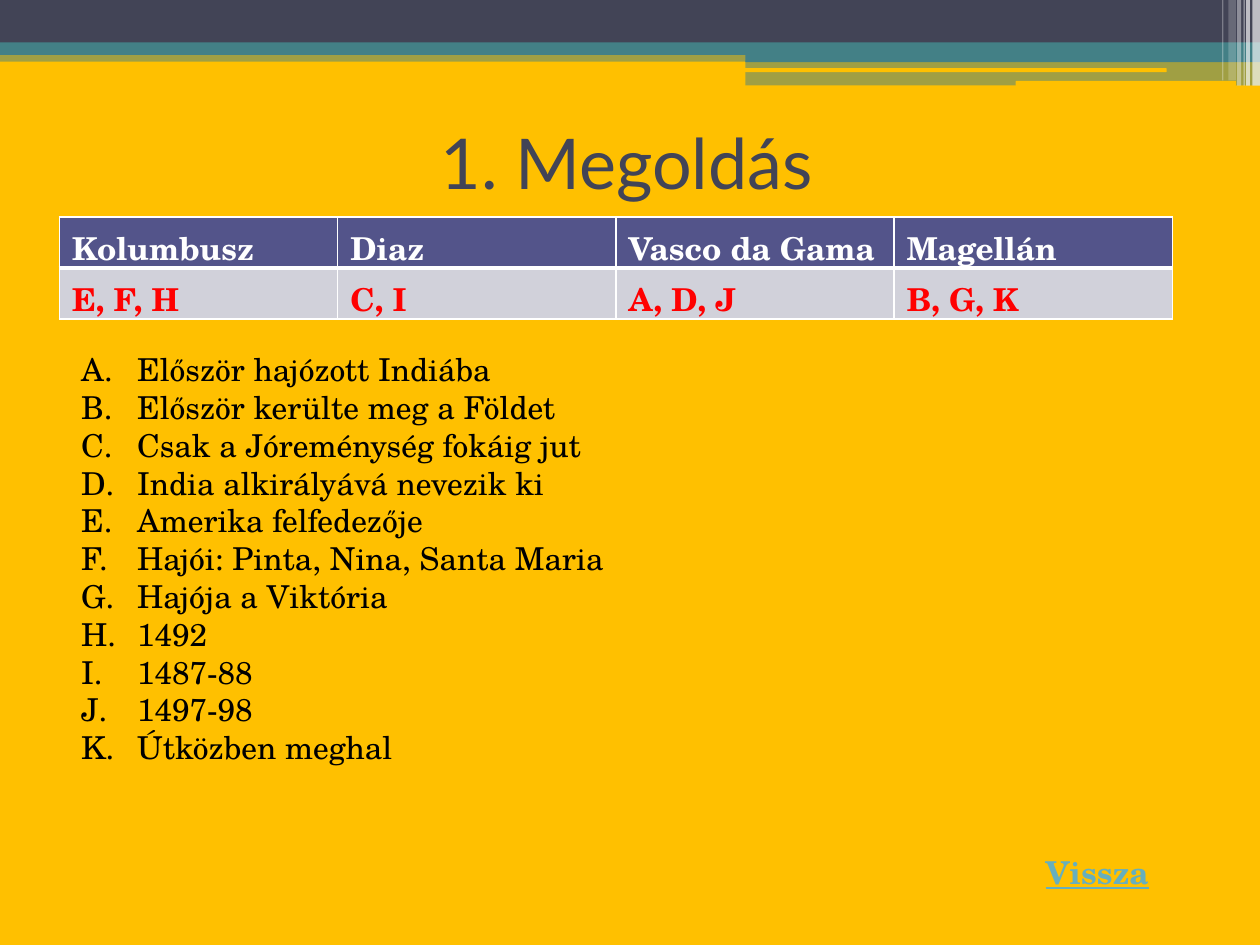
from lxml import etree
from pptx import Presentation
from pptx.dml.color import RGBColor
from pptx.enum.shapes import MSO_SHAPE
from pptx.enum.text import MSO_ANCHOR, PP_ALIGN
from pptx.oxml.ns import qn
from pptx.util import Pt

RECT = MSO_SHAPE.RECTANGLE
ROUND = MSO_SHAPE.ROUNDED_RECTANGLE
MIDDLE = MSO_ANCHOR.MIDDLE
CENTER = PP_ALIGN.CENTER
SERIF = "TeX Gyre Schola"
GOLD, TEAL, SLATE, WHITE = "FFC000", "438086", "424456", "FFFFFF"


def paint(fill, color):
    fill.solid()
    fill.fore_color.rgb = RGBColor.from_string(color)


def write(par, text, color, **form):
    run = par.add_run()
    run.text = text
    for key, value in {"name": SERIF, "size": Pt(18), **form}.items():
        setattr(run.font, key, value)
    paint(run.font.fill, color)


deck = Presentation()
deck.slide_width, deck.slide_height = Pt(720), Pt(540)
slide = deck.slides.add_slide(deck.slide_layouts[5])
paint(slide.background.fill, GOLD)

# Header bars and stripes: form, left, top, width, height, colour, opacity
bars = [
    (RECT, 0, 28.8, 720, 6.5, TEAL, 50),
    (RECT, 0, 0, 720, 24.5, SLATE, 100),
    (RECT, 0, 24.2, 720, 7.2, TEAL, 100),
    (RECT, 426, 28.3, 294, 7.2, TEAL, 100),
    (RECT, 426, 34.6, 294, 14.2, TEAL, 50),
    (ROUND, 425.5, 39, 241.2, 2.2, GOLD, 100),
    (ROUND, 580.3, 46.3, 126, 2.9, GOLD, 100),
]
stripes = [(715.7, 4.3, 49, 65), (712.1, 2.2, 49, 65), (710.6, 0.7, 49, 60),
           (707, 2.2, 49, 40), (702, 4.3, 46, 20), (698.4, 0.7, 46, 30)]
bars += [(RECT, x, 0, w, h, WHITE, a) for x, w, h, a in stripes]
for form, x, y, w, h, color, alpha in bars:
    bar = slide.shapes.add_shape(form, Pt(x), Pt(y), Pt(w), Pt(h))
    bar.shadow.inherit = False
    bar.line.fill.background()
    paint(bar.fill, color)
    if alpha < 100:
        tint = bar.fill._xPr.find(".//" + qn("a:srgbClr"))
        etree.SubElement(tint, qn("a:alpha"), val=str(alpha * 1000))

# Title
title = slide.shapes.title
title.left, title.top, title.width, title.height = Pt(34), Pt(50.4), Pt(648), Pt(84)
title.text_frame.vertical_anchor = MIDDLE
head = title.text_frame.paragraphs[0]
head.alignment = CENTER
write(head, "1. Megoldás", SLATE, name="Lato", size=Pt(40))

# Back label
back = slide.shapes.add_textbox(Pt(590.4), Pt(484), Pt(74), Pt(29))
back.text_frame.word_wrap = False
paint(back.fill, GOLD)
write(back.text_frame.paragraphs[0], "Vissza", "67AFBD", bold=True, underline=True)

# Table of answers
rows = [
    (["Kolumbusz", "Diaz", "Vasco da Gama", "Magellán"], WHITE, "53548A",
     {"L": 1, "R": 1, "T": 1, "B": 3}),
    (["E, F, H", "C, I", "A, D, J", "B, G, K"], "FF0000", "D1D1DA",
     {"L": 1, "R": 1, "T": 3, "B": 1}),
]
table = slide.shapes.add_table(2, 4, Pt(34), Pt(124), Pt(636), Pt(58.4)).table
for r, (words, ink, shade, edges) in enumerate(rows):
    for c, word in enumerate(words):
        cell = table.cell(r, c)
        write(cell.text_frame.paragraphs[0], word, ink, bold=True)
        props = cell._tc.get_or_add_tcPr()
        for side, width in edges.items():
            edge = etree.SubElement(props, qn("a:ln" + side), w=str(Pt(width)))
            solid = etree.SubElement(edge, qn("a:solidFill"))
            etree.SubElement(solid, qn("a:srgbClr"), val=WHITE)
        paint(cell.fill, shade)

# Lettered list of clues
clues = [
    "Először hajózott Indiába",
    "Először kerülte meg a Földet",
    "Csak a Jóreménység fokáig jut",
    "India alkirályává nevezik ki",
    "Amerika felfedezője",
    "Hajói: Pinta, Nina, Santa Maria",
    "Hajója a Viktória",
    "1492",
    "1487-88",
    "1497-98",
    "Útközben meghal",
]
frame = slide.shapes.add_textbox(Pt(39.3), Pt(196.6), Pt(568), Pt(247)).text_frame
frame.word_wrap = True
for i, clue in enumerate(clues):
    par = frame.add_paragraph() if i else frame.paragraphs[0]
    props = par._p.get_or_add_pPr()
    props.set("marL", str(Pt(32)))
    props.set("indent", str(Pt(-32)))
    etree.SubElement(props, qn("a:buFont"), typeface=SERIF)
    etree.SubElement(props, qn("a:buAutoNum"), type="alphaUcPeriod")
    write(par, clue, "000000")

deck.save("out.pptx")
